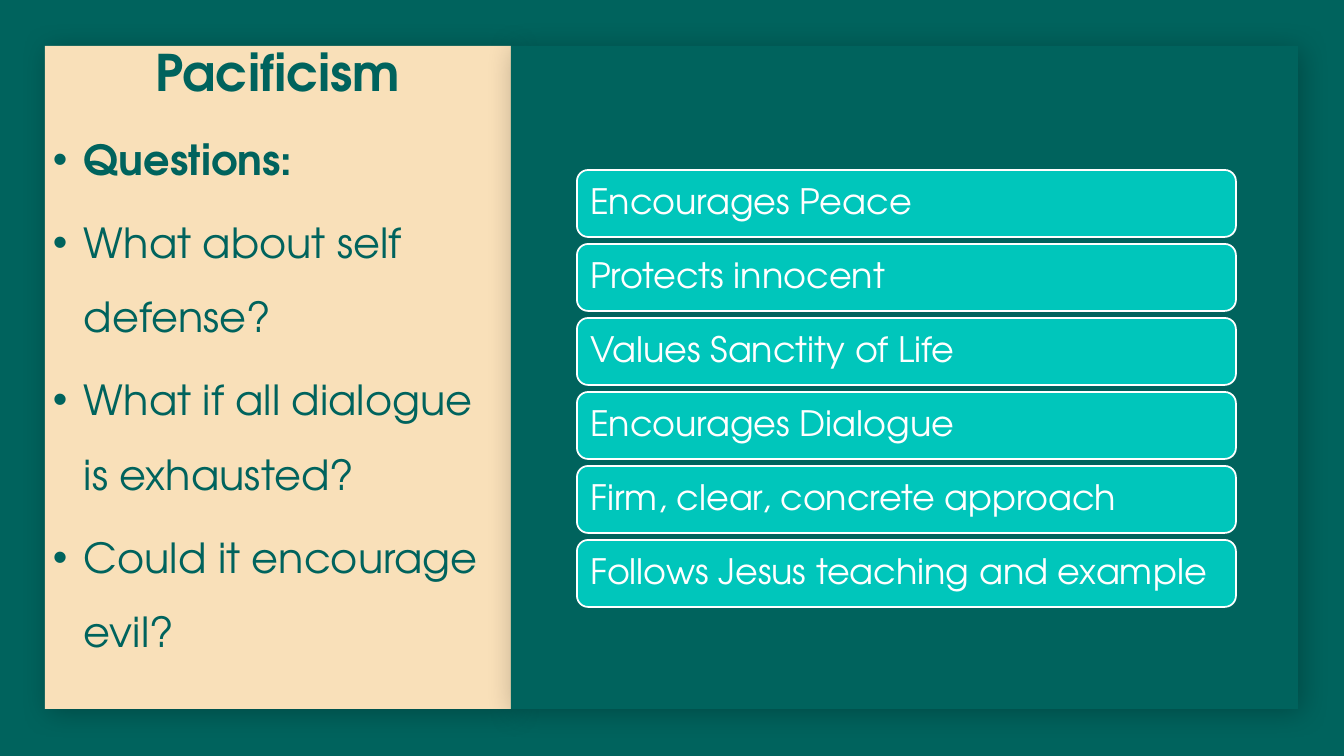
from lxml import etree
from pptx import Presentation
from pptx.dml.color import RGBColor
from pptx.enum.shapes import MSO_SHAPE
from pptx.enum.text import MSO_ANCHOR, MSO_AUTO_SIZE, PP_ALIGN
from pptx.oxml import parse_xml
from pptx.oxml.ns import qn
from pptx.util import Pt

RECT, ROUND = MSO_SHAPE.RECTANGLE, MSO_SHAPE.ROUNDED_RECTANGLE
MIDDLE, TOP = MSO_ANCHOR.MIDDLE, MSO_ANCHOR.TOP
LEFT, CENTER = PP_ALIGN.LEFT, PP_ALIGN.CENTER
NO_FIT = MSO_AUTO_SIZE.NONE

SCALE = 914400 / 100.8
FONT = "TeX Gyre Adventor"
TEAL, SAND, AQUA, WHITE = "00635D", "F9E0B9", "00C6BB", "FFFFFF"
NS = "http://schemas.openxmlformats.org/drawingml/2006/main"

POINTS = ["Encourages Peace", "Protects innocent", "Values Sanctity of Life",
          "Encourages Dialogue", "Firm, clear, concrete approach",
          "Follows Jesus teaching and example"]
ASKS = ["Questions:", "What about self defense?",
        "What if all dialogue is exhausted?", "Could it encourage evil?"]


def px(n):
    return round(n * SCALE)


def color(hex_code):
    return RGBColor.from_string(hex_code)


def assign(item, values):
    for name, value in values.items():
        setattr(item, name, value)


def place(item, box):
    assign(item, dict(zip(("left", "top", "width", "height"), map(px, box))))


def set_frame(frame, anchor, pads):
    sides = ("margin_left", "margin_top", "margin_right", "margin_bottom")
    assign(frame, {"word_wrap": True, "auto_size": NO_FIT,
                   "vertical_anchor": anchor, **dict(zip(sides, map(px, pads)))})


def style(para, text, size, tint, bold=False, **form):
    para.text = text
    assign(para, form)
    assign(para.font, {"name": FONT, "size": Pt(size), "bold": bold})
    para.font.color.rgb = color(tint)


def add_box(slide, kind, box, fill):
    shape = slide.shapes.add_shape(kind, *map(px, box))
    shape.fill.solid()
    shape.fill.fore_color.rgb = color(fill)
    shape.line.fill.background()
    shape.shadow.inherit = False
    return shape


def add_panel(slide, box, fill):
    """Draw a borderless panel with a soft shadow to the lower right."""
    panel = add_box(slide, RECT, box, fill)
    panel.element.spPr.find(qn("a:effectLst")).append(parse_xml(
        f'<a:outerShdw xmlns:a="{NS}" blurRad="{Pt(20)}" dist="{Pt(4)}" '
        'dir="2700000" algn="tl" rotWithShape="0"><a:srgbClr val="000000">'
        '<a:alpha val="25000"/></a:srgbClr></a:outerShdw>'))


def add_bullet(para, tint, indent):
    props = para._p.get_or_add_pPr()
    assign_xml = {"marL": indent, "indent": -indent}
    for name, value in assign_xml.items():
        props.set(name, str(px(value)))
    shade = etree.SubElement(props, qn("a:buClr"))
    etree.SubElement(shade, qn("a:srgbClr"), val=tint)
    etree.SubElement(props, qn("a:buFont"), typeface="Arial")
    etree.SubElement(props, qn("a:buChar"), char="•")


def add_title(slide, box, text):
    title = slide.shapes.title
    slide.shapes._spTree.append(title.element)
    place(title, box)
    set_frame(title.text_frame, MIDDLE, (10, 5, 10, 5))
    style(title.text_frame.paragraphs[0], text, 36, TEAL, True, alignment=CENTER)


def add_asks(slide, box):
    frame = slide.shapes.add_textbox(*map(px, box)).text_frame
    set_frame(frame, TOP, (10, 5, 30, 5))
    for i, ask in enumerate(ASKS):
        para = frame.add_paragraph() if i else frame.paragraphs[0]
        add_bullet(para, TEAL, 31)
        style(para, ask, 29.6, TEAL, i == 0, line_spacing=1.5, space_after=Pt(6))


def add_points(slide, box):
    """Stack one rounded bar per point, with equal gaps."""
    x, y, w, h = box
    gap = 7
    step = (h + gap) / len(POINTS)
    for i, point in enumerate(POINTS):
        bar = add_box(slide, ROUND, (x, y + i * step, w, step - gap), AQUA)
        bar.line.color.rgb = color(WHITE)
        bar.line.width = Pt(1.25)
        set_frame(bar.text_frame, MIDDLE, (10, 10, 10, 10))
        style(bar.text_frame.paragraphs[0], point, 25, WHITE,
              alignment=LEFT, line_spacing=0.9)


def build_slide(deck):
    slide = deck.slides.add_slide(deck.slide_layouts[5])
    slide.background.fill.solid()
    slide.background.fill.fore_color.rgb = color(TEAL)
    add_panel(slide, (45, 46, 466, 663), SAND)
    add_panel(slide, (511, 46, 787, 663), TEAL)
    add_title(slide, (58, 0, 440, 143), "Pacificism")
    add_asks(slide, (43, 104, 469, 590))
    add_points(slide, (577, 170, 659, 437))


def main():
    deck = Presentation()
    assign(deck, {"slide_width": px(1344), "slide_height": px(756)})
    build_slide(deck)
    deck.save("out.pptx")


if __name__ == "__main__":
    main()
